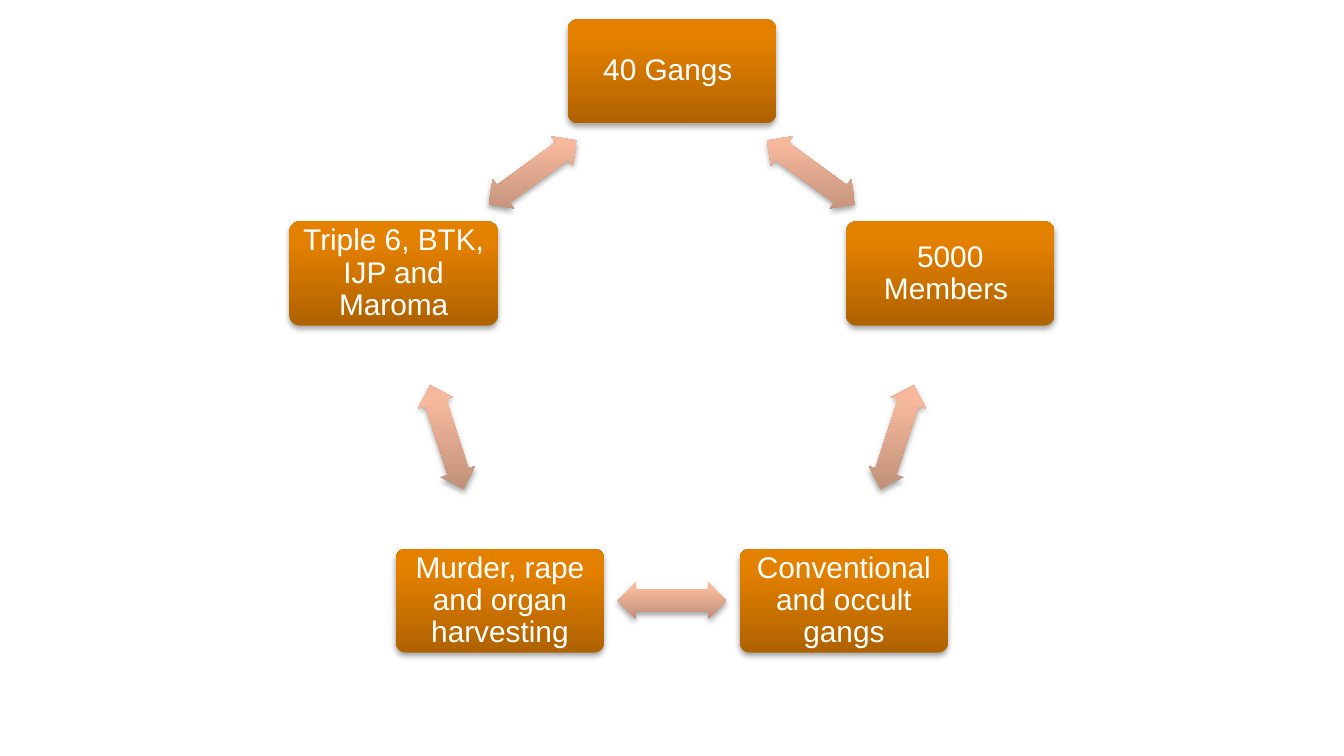
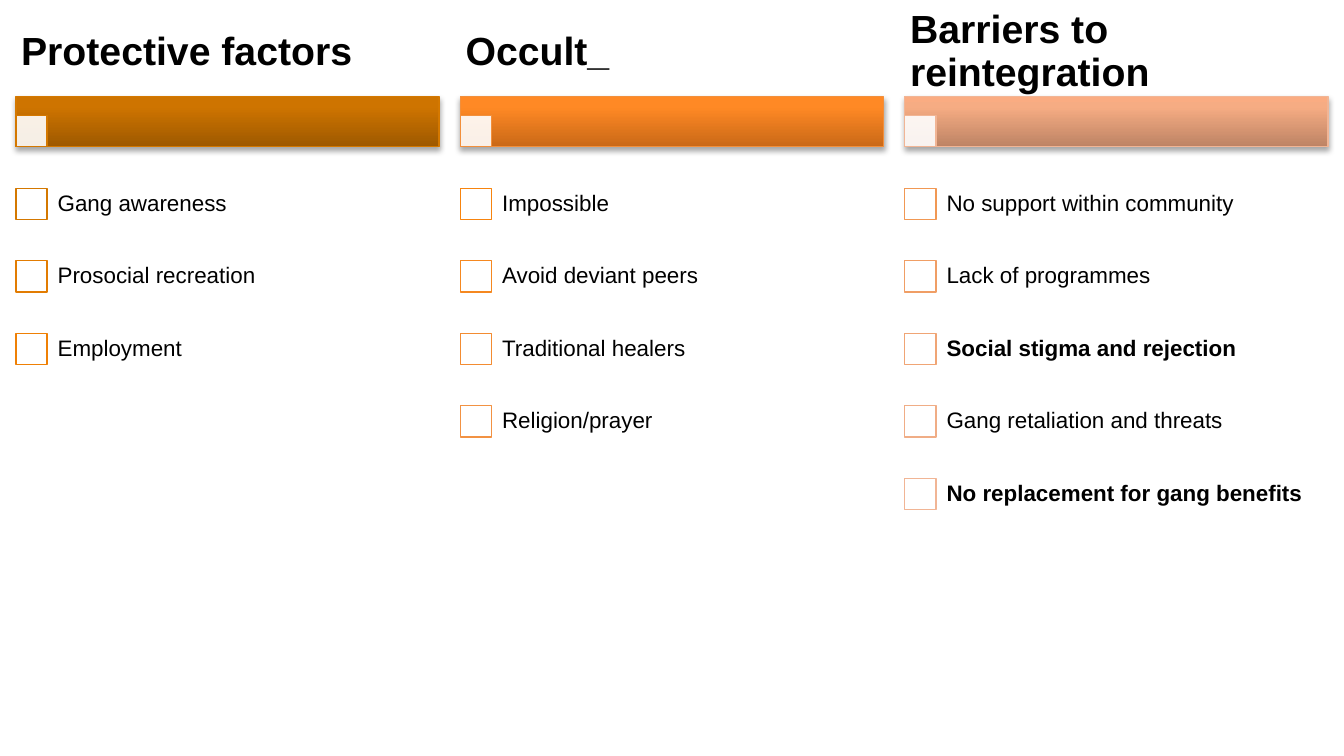
import dataclasses
import math

import lxml.etree
import pptx
import pptx.dml.color
import pptx.enum.shapes
import pptx.enum.text
import pptx.oxml
import pptx.oxml.ns
import pptx.util

Cm = pptx.util.Cm
Pt = pptx.util.Pt
qn = pptx.oxml.ns.qn
Shapes = pptx.enum.shapes.MSO_SHAPE
Align = pptx.enum.text.PP_ALIGN

FONT = "Arial"
WHITE, BLACK = "FFFFFF", "000000"
BOX_GRADIENT = ("AF6200", "E38000", "E48000")
ARROW_GRADIENT = ("BD8E78", "F6B89C", "F8B89A")

# Gang cycle, in centimetres
CENTRE_X, CENTRE_Y, RADIUS = 12.7, 6.88, 5.53
BOX_WIDTH, BOX_HEIGHT = 3.94, 1.97
ARROW_WIDTH, ARROW_HEIGHT = 2.06, 0.69
CYCLE = (
    "40 Gangs ",
    "5000 Members ",
    "Conventional and occult gangs",
    "Murder, rape and organ harvesting",
    "Triple 6, BTK, IJP and Maroma",
)

# Factor columns, in centimetres
COLUMN_LEFT, COLUMN_PITCH, COLUMN_WIDTH = 0.3, 8.4, 8
HEADING_TOP, BAR_TOP, BAR_HEIGHT = 0.15, 1.83, 0.94
ROW_TOP, ROW_PITCH, ROW_INDENT = 3.17, 1.37, 0.56
TICK_SIZE = 0.59


@dataclasses.dataclass(frozen=True)
class Area:
    """A rectangle measured in centimetres."""
    left: float
    top: float
    width: float
    height: float

    def lengths(self) -> tuple:
        return Cm(self.left), Cm(self.top), Cm(self.width), Cm(self.height)


@dataclasses.dataclass(frozen=True)
class Factor:
    text: str
    outline: str
    bold: bool = False


@dataclasses.dataclass(frozen=True)
class Column:
    heading: str
    gradient: tuple[str, str, str]
    outline: str
    factors: tuple[Factor, ...]


COLUMNS = (
    Column("Protective factors", ("9E5900", "CE7400", "CF7500"), "D47800", (
        Factor("Gang awareness", "D47800"),
        Factor("Prosocial recreation", "E27C02"),
        Factor("Employment", "EF8005"),
    )),
    Column("Occult_", ("CA6917", "FF8925", "FF8926"), "F28F3B", (
        Factor("Impossible", "F7840E"),
        Factor("Avoid deviant peers", "F58820"),
        Factor("Traditional healers", "F38C32"),
        Factor("Religion/prayer", "F29243"),
    )),
    Column("Barriers to reintegration", ("BE8465", "F6AC83", "FAAC82"), "F1B595", (
        Factor("No support within community", "F19854"),
        Factor("Lack of programmes", "F09E65"),
        Factor("Social stigma and rejection", "F0A575", True),
        Factor("Gang retaliation and threats", "F0AD86"),
        Factor("No replacement for gang benefits", "F1B595", True),
    )),
)


def colour(value: str) -> pptx.dml.color.RGBColor:
    return pptx.dml.color.RGBColor.from_string(value)


def centred(x: float, y: float, width: float, height: float) -> Area:
    return Area(x - width / 2, y - height / 2, width, height)


def add_outlined(slide, kind, area: Area, outline: str | None):
    """Add a shape without shadow, with a thin outline or none."""
    shape = slide.shapes.add_shape(kind, *area.lengths())
    shape.shadow.inherit = False
    if outline:
        shape.line.color.rgb = colour(outline)
        shape.line.width = Pt(0.75)
    else:
        shape.line.fill.background()
    return shape


def add_glossy(slide, kind, area: Area, gradient: tuple, outline: str | None = None):
    """Add a shape with an upright gradient, dark at the foot, and a soft shadow."""
    shape = add_outlined(slide, kind, area, outline)
    shape.fill.gradient()
    properties = shape._element.spPr
    stops = "".join(
        f'<a:gs pos="{position}"><a:srgbClr val="{value}"/></a:gs>'
        for position, value in zip((0, 80000, 100000), gradient)
    )
    properties.replace(properties.find(qn("a:gradFill")), pptx.oxml.parse_xml(
        f'<a:gradFill {pptx.oxml.ns.nsdecls("a")} rotWithShape="0">'
        f'<a:gsLst>{stops}</a:gsLst><a:lin ang="16200000" scaled="0"/></a:gradFill>'
    ))
    shadow = lxml.etree.SubElement(
        properties.find(qn("a:effectLst")), qn("a:outerShdw"),
        blurRad=str(Pt(3.1)), dist=str(Pt(1.8)), dir="5400000", rotWithShape="0",
    )
    add_alpha(lxml.etree.SubElement(shadow, qn("a:srgbClr"), val=BLACK), 35)
    return shape


def add_alpha(colour_element, percent: int) -> None:
    lxml.etree.SubElement(colour_element, qn("a:alpha"), val=str(percent * 1000))


def write(shape, text: str, size: float, ink: str, margins: tuple[float, float],
          bold: bool = False, align=Align.LEFT) -> None:
    """Set one vertically centred paragraph; margins are (sides, top and bottom)."""
    frame = shape.text_frame
    frame.text = text
    frame.word_wrap = True
    frame.vertical_anchor = pptx.enum.text.MSO_ANCHOR.MIDDLE
    frame.margin_left = frame.margin_right = Cm(margins[0])
    frame.margin_top = frame.margin_bottom = Cm(margins[1])
    para = frame.paragraphs[0]
    para.alignment = align
    para.line_spacing = 0.9
    font = para.runs[0].font
    font.name = FONT
    font.size = Pt(size)
    font.bold = bold
    font.color.rgb = colour(ink)


def add_tick_box(slide, left: float, top: float, outline: str, opacity: int = 100) -> None:
    area = Area(left, top, TICK_SIZE, TICK_SIZE)
    tick = add_outlined(slide, Shapes.RECTANGLE, area, outline)
    tick.fill.solid()
    tick.fill.fore_color.rgb = colour(WHITE)
    if opacity < 100:
        add_alpha(tick._element.spPr.find(qn("a:solidFill"))[0], opacity)


def build_cycle(slide) -> None:
    step = 360 / len(CYCLE)
    points = [
        (CENTRE_X + RADIUS * math.sin(math.radians(index * step)),
         CENTRE_Y - RADIUS * math.cos(math.radians(index * step)))
        for index in range(len(CYCLE))
    ]
    for index, (text, (x, y)) in enumerate(zip(CYCLE, points)):
        box = add_glossy(slide, Shapes.ROUNDED_RECTANGLE,
                         centred(x, y, BOX_WIDTH, BOX_HEIGHT), BOX_GRADIENT)
        box.adjustments[0] = 0.1
        write(box, text, 16, WHITE, (0.18, 0.18), align=Align.CENTER)

        next_x, next_y = points[(index + 1) % len(points)]
        area = centred((x + next_x) / 2, (y + next_y) / 2, ARROW_WIDTH, ARROW_HEIGHT)
        arrow = add_glossy(slide, Shapes.LEFT_RIGHT_ARROW, area, ARROW_GRADIENT)
        arrow.adjustments[0] = 0.6
        arrow.adjustments[1] = 0.5
        arrow.rotation = step * (index + 0.5)


def add_column(slide, column: Column, left: float) -> None:
    add_glossy(slide, Shapes.RECTANGLE, Area(left, BAR_TOP, COLUMN_WIDTH, BAR_HEIGHT),
               column.gradient, column.outline)
    add_tick_box(slide, left, BAR_TOP + BAR_HEIGHT - TICK_SIZE, column.outline, 90)
    area = Area(left, HEADING_TOP, COLUMN_WIDTH, BAR_TOP - HEADING_TOP)
    heading = slide.shapes.add_textbox(*area.lengths())
    write(heading, column.heading, 21, BLACK, (0.1, 0.08), bold=True)
    for index, factor in enumerate(column.factors):
        top = ROW_TOP + index * ROW_PITCH
        add_tick_box(slide, left, top + (ROW_PITCH - TICK_SIZE) / 2, factor.outline)
        area = Area(left + ROW_INDENT, top, COLUMN_WIDTH - ROW_INDENT, ROW_PITCH)
        label = slide.shapes.add_textbox(*area.lengths())
        write(label, factor.text, 12, BLACK, (0.23, 0.23), bold=factor.bold)


def main() -> None:
    deck = pptx.Presentation()
    deck.slide_width, deck.slide_height = Cm(25.4), Cm(14.29)
    blank = deck.slide_layouts[6]
    build_cycle(deck.slides.add_slide(blank))
    factors_slide = deck.slides.add_slide(blank)
    for index, column in enumerate(COLUMNS):
        add_column(factors_slide, column, COLUMN_LEFT + index * COLUMN_PITCH)
    deck.save("out.pptx")


if __name__ == "__main__":
    main()
